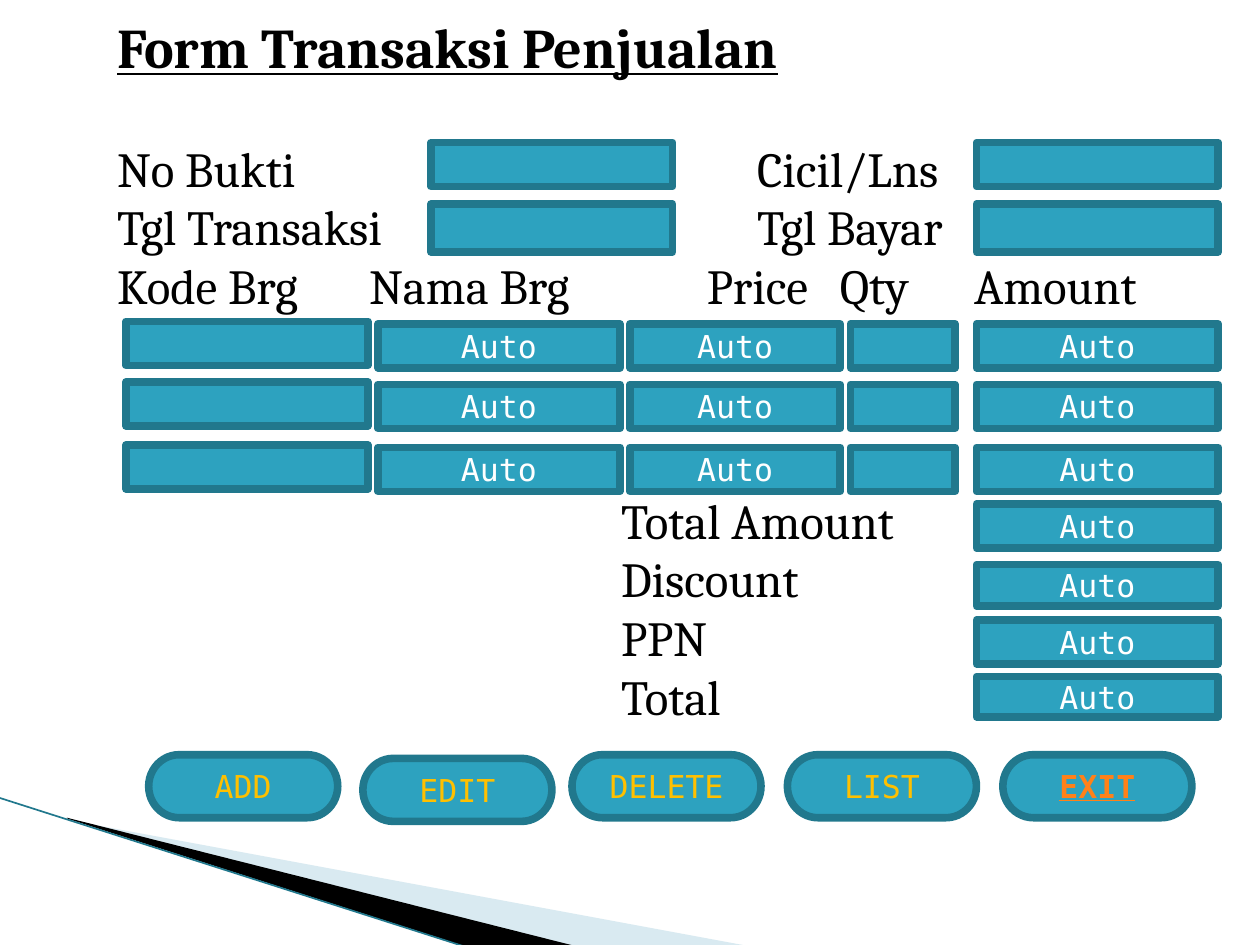
import pptx
import pptx.dml.color
import pptx.enum.shapes
import pptx.enum.text
import pptx.oxml
import pptx.oxml.ns
import pptx.util
from lxml import etree

Pt = pptx.util.Pt
SHAPE = pptx.enum.shapes.MSO_SHAPE

THEME = {
    "field": "2DA2BF", "edge": "21788D", "wedge": "A0CBDC", "ink": "000000",
    "label": "Cambria", "entry": "DejaVu Sans Mono", "edge_width": 4.33, "hairline": 0.95,
}
FORMATS = {
    "title": {"name": THEME["label"], "size": Pt(32), "bold": True, "underline": True, "color": THEME["ink"]},
    "label": {"name": THEME["label"], "size": Pt(28), "bold": False, "color": THEME["ink"]},
    "auto": {"name": THEME["entry"], "size": Pt(18), "color": "FFFFFF"},
    "button": {"name": THEME["entry"], "size": Pt(18), "color": "FFC000"},
    "exit": {"name": THEME["entry"], "size": Pt(18), "bold": True, "underline": True, "color": "FF8119"},
}

# (text, format, space before, tab stops)
LABELS = [
    ("Form Transaksi Penjualan", "title", 0, []),
    ("No Bukti\tCicil/Lns", "label", 33.4, [365.7]),
    ("Tgl Transaksi\tTgl Bayar", "label", 0, [365.7]),
    ("Kode Brg\tNama Brg\tPrice\tQty\tAmount", "label", 0, [144, 337, 413, 489.7]),
    ("\tTotal Amount", "label", 100.3, [288]),
    ("\tDiscount", "label", 0, [288]),
    ("\tPPN", "label", 0, [288]),
    ("\tTotal", "label", 0, [288]),
]
LABEL_BOX = (59.8, 3.6, 653.8, 487.4)

AMOUNT_LEFT, FIELD_WIDTH, FIELD_HEIGHT = 558, 138.2, 25.2
HEADER_LEFTS = [246.2, AMOUNT_LEFT]
HEADER_ROWS = [(81.4, FIELD_HEIGHT), (116.6, 27.4)]
# (left, width, vertical shift, text)
ITEM_COLUMNS = [
    (72, FIELD_WIDTH, -1.4, ""),
    (216, FIELD_WIDTH, 0, "Auto"),
    (360, 120.2, 0, "Auto"),
    (486, 59.8, 0, ""),
    (AMOUNT_LEFT, FIELD_WIDTH, 0, "Auto"),
]
ITEM_TOPS = [185, 219.6, 255.6]
TOTAL_ROWS = [(288, FIELD_HEIGHT), (322.6, 23.8), (354.2, FIELD_HEIGHT), (386.6, 23)]
BUTTONS = [
    ("ADD", 85, 431.3, "button"),
    ("EDIT", 207.4, 433.4, "button"),
    ("DELETE", 326.9, 431.3, "button"),
    ("LIST", 450, 431.3, "button"),
    ("EXIT", 573.1, 431.3, "exit"),
]
BUTTON_SIZE = (108, 36)
# (outline, colour, opacity in percent)
WEDGES = [
    ([(39.6, 468.7), (428.4, 540.7), (328.3, 540.7), (39.6, 468)], THEME["wedge"], 40),
    ([(38.2, 467.3), (329, 540.7), (267.8, 541.4), (38.9, 468)], THEME["ink"], 100),
]
SWEEP = (-0.7, 455.8, 267.1, 541.4)


def rgb(code):
    return pptx.dml.color.RGBColor.from_string(code)


def apply_format(font, name):
    for key, value in FORMATS[name].items():
        if key == "color":
            font.color.rgb = rgb(value)
        else:
            setattr(font, key, value)


def add_wedge(slide, outline, color, opacity):
    points = [(Pt(x), Pt(y)) for x, y in outline]
    builder = slide.shapes.build_freeform(*points[0], scale=1.0)
    builder.add_line_segments(points[1:], close=True)
    wedge = builder.convert_to_shape()
    wedge.shadow.inherit = False
    wedge.line.fill.background()
    wedge.fill.solid()
    wedge.fill.fore_color.rgb = rgb(color)
    if opacity < 100:
        tint = wedge.fill._xPr.find(".//" + pptx.oxml.ns.qn("a:srgbClr"))
        etree.SubElement(tint, pptx.oxml.ns.qn("a:alpha"), val=str(opacity * 1000))


def add_sweep(slide):
    sweep = slide.shapes.add_connector(
        pptx.enum.shapes.MSO_CONNECTOR.STRAIGHT, *map(Pt, SWEEP))
    sweep.line.color.rgb = rgb(THEME["edge"])
    sweep.line.width = Pt(THEME["hairline"])
    etree.SubElement(sweep._element.spPr, pptx.oxml.ns.qn("a:effectLst"))


def add_labels(slide):
    frame = slide.shapes.add_textbox(*map(Pt, LABEL_BOX)).text_frame
    frame.word_wrap = True
    for index, (text, style, space, stops) in enumerate(LABELS):
        paragraph = frame.paragraphs[0] if index == 0 else frame.add_paragraph()
        paragraph.space_before = Pt(space)
        if stops:
            tabs = etree.SubElement(
                paragraph._p.get_or_add_pPr(), pptx.oxml.ns.qn("a:tabLst"))
            for stop in stops:
                etree.SubElement(
                    tabs, pptx.oxml.ns.qn("a:tab"), pos=str(int(Pt(stop))), algn="l")
        run = paragraph.add_run()
        run.text = text
        apply_format(run.font, style)


def add_control(slide, left, top, width, height, text="", style="auto", kind=SHAPE.RECTANGLE):
    control = slide.shapes.add_shape(kind, *map(Pt, (left, top, width, height)))
    control.shadow.inherit = False
    control.fill.solid()
    control.fill.fore_color.rgb = rgb(THEME["field"])
    control.line.color.rgb = rgb(THEME["edge"])
    control.line.width = Pt(THEME["edge_width"])
    if text:
        control.text_frame.vertical_anchor = pptx.enum.text.MSO_ANCHOR.MIDDLE
        paragraph = control.text_frame.paragraphs[0]
        paragraph.alignment = pptx.enum.text.PP_ALIGN.CENTER
        run = paragraph.add_run()
        run.text = text
        apply_format(run.font, style)


def main():
    """Build the sales transaction form slide."""
    deck = pptx.Presentation()
    deck.slide_width, deck.slide_height = Pt(720), Pt(540)
    slide = deck.slides.add_slide(deck.slide_layouts[6])
    for wedge in WEDGES:
        add_wedge(slide, *wedge)
    add_sweep(slide)
    add_labels(slide)
    for left in HEADER_LEFTS:
        for top, height in HEADER_ROWS:
            add_control(slide, left, top, FIELD_WIDTH, height)
    for top in ITEM_TOPS:
        for left, width, shift, text in ITEM_COLUMNS:
            add_control(slide, left, top + shift, width, FIELD_HEIGHT, text)
    for top, height in TOTAL_ROWS:
        add_control(slide, AMOUNT_LEFT, top, FIELD_WIDTH, height, "Auto")
    for text, left, top, style in BUTTONS:
        add_control(slide, left, top, *BUTTON_SIZE, text, style, SHAPE.FLOWCHART_TERMINATOR)
    deck.save("out.pptx")


if __name__ == "__main__":
    main()
